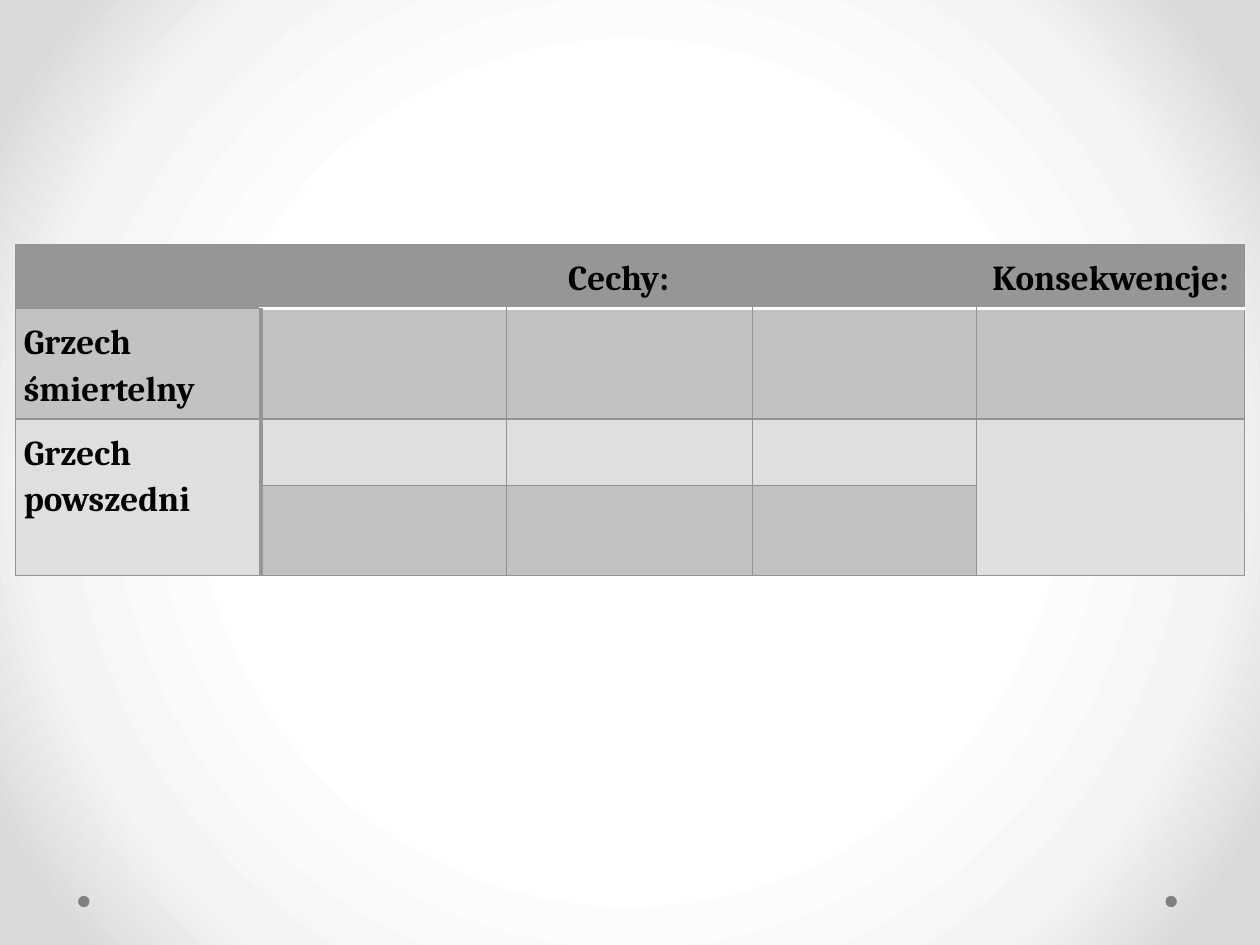
from typing import NamedTuple, Optional

from lxml import etree
from pptx import Presentation
from pptx import util as u
from pptx.dml.color import RGBColor
from pptx.enum import shapes, text
from pptx.oxml import parse_xml
from pptx.oxml.ns import qn

NS = "http://schemas.openxmlformats.org/drawingml/2006/main"


class Line(NamedTuple):
    color: str
    width: float


class Label(NamedTuple):
    row: int
    col: int
    words: str
    align: text.PP_ALIGN


THIN = Line("939393", 0.75)
THICK = Line("969696", 2.25)
WHITE = Line("FFFFFF", 2.25)
HEAD, DARK, LIGHT = "969696", "C2C2C2", "DFDFDF"
ROWS = [0.51, 0.87, 0.53, 0.71]
COLS = [1.95, 1.95, 1.95, 1.78, 2.13]
FILLS = [HEAD, DARK, LIGHT, DARK]
SPANS = [((0, 1), (0, 3)), ((2, 0), (3, 0)), ((2, 4), (3, 4))]
LABELS = [
    Label(0, 1, "Cechy:", text.PP_ALIGN.CENTER),
    Label(0, 4, "Konsekwencje:", text.PP_ALIGN.CENTER),
    Label(1, 0, "Grzech śmiertelny", text.PP_ALIGN.LEFT),
    Label(2, 0, "Grzech powszedni", text.PP_ALIGN.LEFT),
]
FONT = {"name": "Cambria", "size": u.Pt(20), "bold": True}
PARA = {"line_spacing": 1.15, "space_before": u.Pt(12), "space_after": u.Pt(12)}
INSETS = {f"margin_{side}": u.Inches(0.07)
          for side in ("left", "right", "top", "bottom")}
STOPS = [(50, "FFFFFF"), (76, "F4F4F4"), (92, "DADADA")]


def paint(fill, color: str) -> None:
    fill.solid()
    fill.fore_color.rgb = RGBColor.from_string(color)


def style(item, values: dict) -> None:
    for name, value in values.items():
        setattr(item, name, value)


def backdrop(slide) -> None:
    """Lay a round gradient, white at the centre."""
    paint(slide.background.fill, "FFFFFF")
    stops = "".join(
        f'<a:gs pos="{pos * 1000}"><a:srgbClr val="{color}"/></a:gs>'
        for pos, color in STOPS)
    grad = parse_xml(
        f'<a:gradFill xmlns:a="{NS}" rotWithShape="1"><a:gsLst>{stops}</a:gsLst>'
        '<a:path path="circle"><a:fillToRect l="50000" t="50000" r="50000" '
        'b="50000"/></a:path></a:gradFill>')
    solid = next(slide.element.iter(qn("a:solidFill")))
    solid.getparent().replace(solid, grad)


def dot(slide, left: float) -> None:
    oval = slide.shapes.add_shape(
        shapes.MSO_SHAPE.OVAL, u.Inches(left), u.Inches(7.11),
        u.Inches(0.09), u.Inches(0.09))
    oval.shadow.inherit = False
    paint(oval.fill, "808080")
    oval.line.fill.background()


def edges(row: int, col: int) -> dict[str, Optional[Line]]:
    """Give the four border lines of a cell."""
    rule = THIN if col == 0 else WHITE
    if row == 0:
        return {"L": THIN if col == 0 else None,
                "R": THIN if col == len(COLS) - 1 else None,
                "T": THIN, "B": rule}
    return {"L": THICK if col == 1 else THIN,
            "R": THICK if col == 0 else THIN,
            "T": rule if row == 1 else THIN, "B": THIN}


def border(cell, lines: dict[str, Optional[Line]]) -> None:
    props = cell._tc.get_or_add_tcPr()
    for spot, (side, line) in enumerate(lines.items()):
        ln = etree.Element(qn(f"a:ln{side}"))
        if line:
            ln.set("w", str(int(u.Pt(line.width))))
            solid = etree.SubElement(ln, qn("a:solidFill"))
            etree.SubElement(solid, qn("a:srgbClr"), val=line.color)
        else:
            etree.SubElement(ln, qn("a:noFill"))
        props.insert(spot, ln)


def write(cell, label: Label) -> None:
    para = cell.text_frame.paragraphs[0]
    style(para, PARA | {"alignment": label.align})
    run = para.add_run()
    run.text = label.words
    style(run.font, FONT)
    run.font.color.rgb = RGBColor.from_string("000000")


def grid(slide) -> None:
    table = slide.shapes.add_table(
        len(ROWS), len(COLS), u.Inches(0.12), u.Inches(1.94),
        u.Inches(sum(COLS)), u.Inches(sum(ROWS))).table
    style(table, {"first_row": False, "horz_banding": False})
    for col, width in zip(table.columns, COLS):
        col.width = u.Inches(width)
    for r, height in enumerate(ROWS):
        table.rows[r].height = u.Inches(height)
        for c in range(len(COLS)):
            cell = table.cell(r, c)
            style(cell, INSETS)
            paint(cell.fill, FILLS[r])
            border(cell, edges(r, c))
    for start, end in SPANS:
        table.cell(*start).merge(table.cell(*end))
    for label in LABELS:
        write(table.cell(label.row, label.col), label)


def main() -> None:
    deck = Presentation()
    style(deck, {"slide_width": u.Inches(10), "slide_height": u.Inches(7.5)})
    slide = deck.slides.add_slide(deck.slide_layouts[6])
    backdrop(slide)
    # Footer dots
    for left in (9.25, 0.62):
        dot(slide, left)
    # Table of sins
    grid(slide)
    deck.save("out.pptx")


if __name__ == "__main__":
    main()
